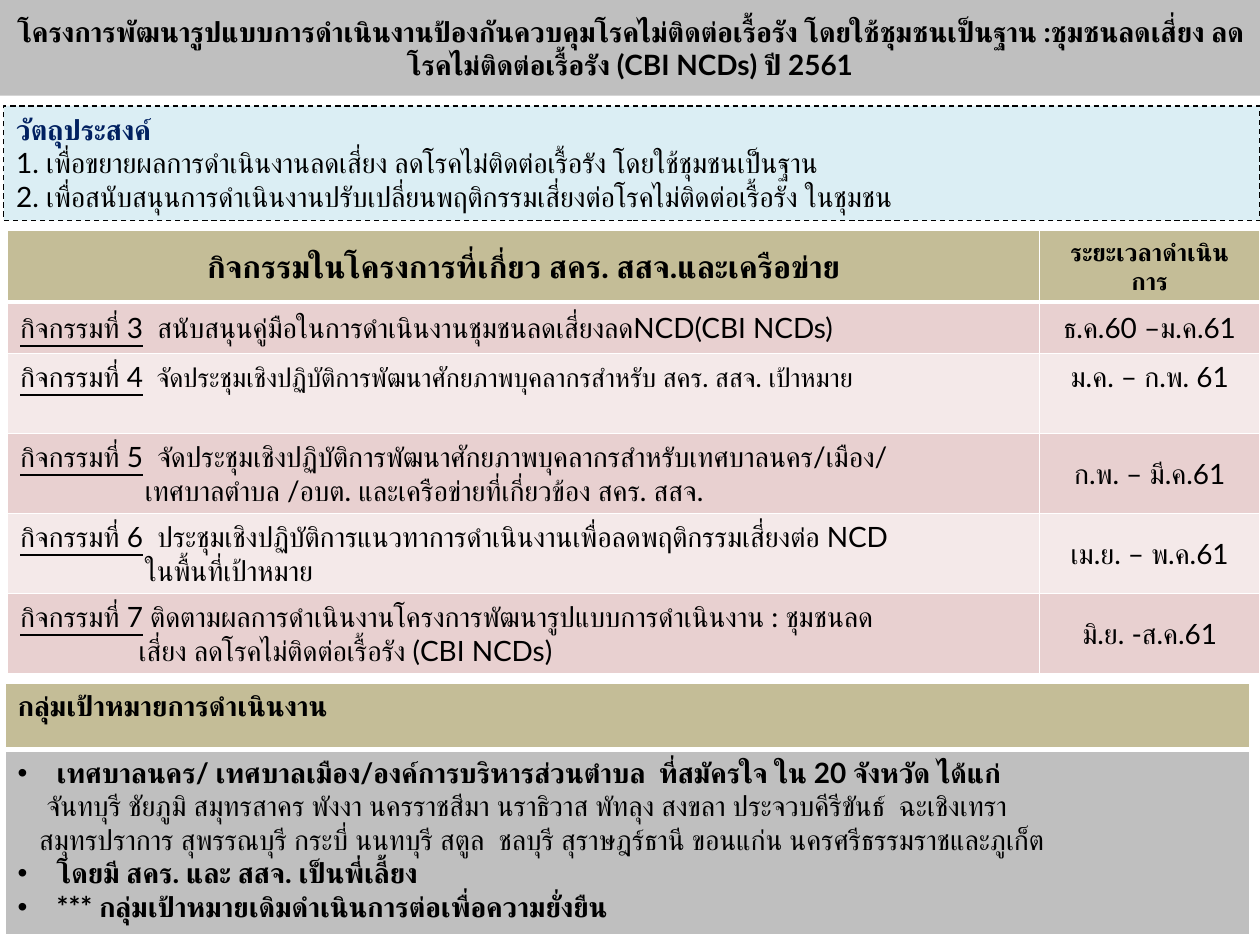
from dataclasses import dataclass

from lxml import etree
from pptx import Presentation
from pptx import util as u
from pptx.dml.color import RGBColor
from pptx.enum import dml, shapes, text
from pptx.oxml import ns


@dataclass(frozen=True)
class Theme:
    font: str = "Lato"
    ink: str = "000000"
    navy: str = "002060"
    grey: str = "BFBFBF"
    sky: str = "DBEEF4"
    khaki: str = "C4BD97"
    rose: str = "E8D0D0"
    blush: str = "F4E9E9"
    white: str = "FFFFFF"
    heading: int = 18
    body: int = 16
    tight: int = 15
    small: int = 14


theme = Theme()
CENTER = text.PP_ALIGN.CENTER
MIDDLE, TOP = text.MSO_ANCHOR.MIDDLE, text.MSO_ANCHOR.TOP


def write(frame, words, *, label="", size=theme.body, bold=False, color=theme.ink,
          align=text.PP_ALIGN.LEFT, left=0, bullet=False):
    """Add a paragraph, led by an underlined label if one is given."""
    para = frame.paragraphs[0]
    if para.runs:
        para = frame.add_paragraph()
    para.alignment = align
    props = para._p.get_or_add_pPr()
    props.set("marL", str(u.Inches(left)))
    props.set("indent", str(u.Inches(-left if bullet else 0)))
    if bullet:
        etree.SubElement(props, ns.qn("a:buFont"), typeface="Arial")
        etree.SubElement(props, ns.qn("a:buChar"), char="•")
    for part in filter(None, (label, words)):
        span = para.add_run()
        span.text = part
        font = span.font
        font.name, font.bold = theme.font, bold
        font.size = u.Pt(theme.body if part == label else size)
        font.underline = part == label
        font.color.rgb = RGBColor.from_string(color)
        etree.SubElement(font._element, ns.qn("a:cs"), typeface=theme.font)


def paint_cell(cell, color, anchor=MIDDLE, bottom=1):
    """Fill a cell and rule its sides in white, with its own bottom width."""
    cell.vertical_anchor = anchor
    cell.fill.solid()
    cell.fill.fore_color.rgb = RGBColor.from_string(color)
    props = cell._tc.get_or_add_tcPr()
    for place, side in enumerate("LRTB"):
        width = bottom if side == "B" else 1
        line = etree.Element(ns.qn(f"a:ln{side}"), w=str(u.Pt(width)))
        paint = etree.SubElement(line, ns.qn("a:solidFill"))
        etree.SubElement(paint, ns.qn("a:srgbClr"), val=theme.white)
        props.insert(place, line)


deck = Presentation()
deck.slide_width, deck.slide_height = u.Inches(10), u.Inches(7.5)
page = deck.slides.add_slide(deck.slide_layouts[5])

# Title band
title = page.shapes.title
title.left, title.top = 0, 0
title.width, title.height = deck.slide_width, u.Inches(0.76)
title.fill.solid()
title.fill.fore_color.rgb = RGBColor.from_string(theme.grey)
title.text_frame.auto_size = text.MSO_AUTO_SIZE.NONE
title.text_frame.vertical_anchor = MIDDLE
write(title.text_frame,
      "โครงการพัฒนารูปแบบการดำเนินงานป้องกันควบคุมโรคไม่ติดต่อเรื้อรัง "
      "โดยใช้ชุมชนเป็นฐาน :ชุมชนลดเสี่ยง ลดโรคไม่ติดต่อเรื้อรัง (CBI NCDs) ปี 2561",
      bold=True, align=CENTER)

# Objectives
box = page.shapes.add_shape(shapes.MSO_SHAPE.RECTANGLE, u.Inches(0.03), u.Inches(0.84),
                            u.Inches(9.97), u.Inches(0.91))
box.shadow.inherit = False
box.fill.solid()
box.fill.fore_color.rgb = RGBColor.from_string(theme.sky)
box.line.color.rgb = RGBColor.from_string(theme.ink)
box.line.width = u.Pt(0.75)
box.line.dash_style = dml.MSO_LINE.DASH
objectives = box.text_frame
objectives.word_wrap = True
objectives.vertical_anchor = TOP
write(objectives, "วัตถุประสงค์", bold=True, color=theme.navy)
write(objectives, "1. เพื่อขยายผลการดำเนินงานลดเสี่ยง ลดโรคไม่ติดต่อเรื้อรัง โดยใช้ชุมชนเป็นฐาน")
write(objectives, "2. เพื่อสนับสนุนการดำเนินงานปรับเปลี่ยนพฤติกรรมเสี่ยงต่อโรคไม่ติดต่อเรื้อรัง ในชุมชน")

# Target groups
targets = page.shapes.add_table(2, 1, u.Inches(0.04), u.Inches(5.42),
                                u.Inches(9.88), u.Inches(2)).table
targets.rows[0].height, targets.rows[1].height = u.Inches(0.53), u.Inches(1.47)
heading, groups = targets.cell(0, 0), targets.cell(1, 0)
paint_cell(heading, theme.khaki, TOP, bottom=3)
paint_cell(groups, theme.grey, TOP)
write(heading.text_frame, "กลุ่มเป้าหมายการดำเนินงาน", bold=True)
point = dict(bold=True, left=0.31, bullet=True)
for words, look in (
    ("เทศบาลนคร/ เทศบาลเมือง/องค์การบริหารส่วนตำบล  ที่สมัครใจ ใน 20 จังหวัด ได้แก่", point),
    ("จันทบุรี ชัยภูมิ สมุทรสาคร พังงา นครราชสีมา นราธิวาส พัทลุง สงขลา ประจวบคีรีขันธ์  ฉะเชิงเทรา",
     dict(left=0.23)),
    ("สมุทรปราการ สุพรรณบุรี กระบี่ นนทบุรี สตูล  ชลบุรี สุราษฎร์ธานี ขอนแก่น นครศรีธรรมราชและภูเก็ต",
     dict(left=0.17)),
    ("โดยมี สคร. และ สสจ. เป็นพี่เลี้ยง", point),
    ("*** กลุ่มเป้าหมายเดิมดำเนินการต่อเพื่อความยั่งยืน", point),
):
    write(groups.text_frame, words, **look)

# Activities: number, first line, second line, its indent, period, size, anchor
activities = (
    (3, "  สนับสนุนคู่มือในการดำเนินงานชุมชนลดเสี่ยงลดNCD(CBI NCDs)",
     "", 0, "ธ.ค.60 –ม.ค.61", theme.body, MIDDLE),
    (4, "  จัดประชุมเชิงปฏิบัติการพัฒนาศักยภาพบุคลากรสำหรับ สคร. สสจ. เป้าหมาย",
     "", 0, "ม.ค. – ก.พ. 61", theme.tight, TOP),
    (5, "  จัดประชุมเชิงปฏิบัติการพัฒนาศักยภาพบุคลากรสำหรับเทศบาลนคร/เมือง/",
     "เทศบาลตำบล /อบต. และเครือข่ายที่เกี่ยวข้อง สคร. สสจ.", 0.99,
     "ก.พ. – มี.ค.61", theme.body, MIDDLE),
    (6, "  ประชุมเชิงปฏิบัติการแนวทาการดำเนินงานเพื่อลดพฤติกรรมเสี่ยงต่อ NCD",
     "ในพื้นที่เป้าหมาย", 0.99, "เม.ย. – พ.ค.61", theme.body, MIDDLE),
    (7, " ติดตามผลการดำเนินงานโครงการพัฒนารูปแบบการดำเนินงาน : ชุมชนลด",
     "เสี่ยง ลดโรคไม่ติดต่อเรื้อรัง (CBI NCDs)", 0.94,
     "มิ.ย. -ส.ค.61", theme.body, MIDDLE),
)
plan = page.shapes.add_table(len(activities) + 1, 2, u.Inches(0.06), u.Inches(1.83),
                             u.Inches(9.94), u.Inches(3.5)).table
plan.columns[0].width, plan.columns[1].width = u.Inches(8.19), u.Inches(1.75)
for row, height in zip(plan.rows, (0.55, 0.41) + (0.635,) * 4):
    row.height = u.Inches(height)
for column, (words, size) in enumerate((
    ("กิจกรรมในโครงการที่เกี่ยว สคร. สสจ.และเครือข่าย", theme.heading),
    ("ระยะเวลาดำเนินการ", theme.small),
)):
    cell = plan.cell(0, column)
    paint_cell(cell, theme.khaki, bottom=3)
    write(cell.text_frame, words, size=size, bold=True, align=CENTER)
for row, (number, first, second, left, period, size, anchor) in enumerate(activities, 1):
    activity, time = plan.cell(row, 0), plan.cell(row, 1)
    for cell in (activity, time):
        paint_cell(cell, theme.rose if row % 2 else theme.blush, anchor)
    write(activity.text_frame, first, label=f"กิจกรรมที่ {number}", size=size)
    if second:
        write(activity.text_frame, second, left=left)
    write(time.text_frame, period, align=CENTER)

deck.save("out.pptx")
